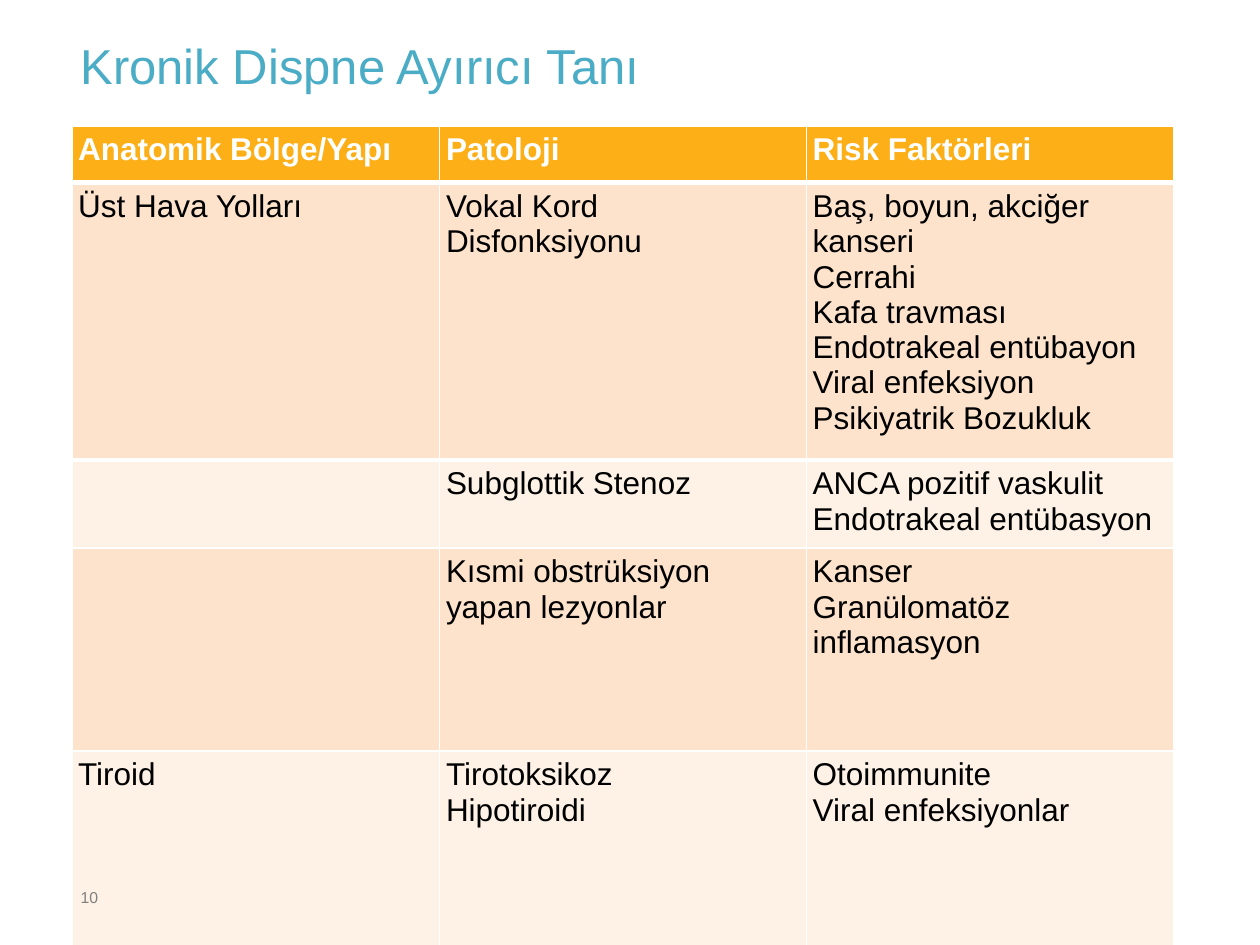
from lxml.etree import SubElement
from pptx import Presentation
from pptx.dml.color import RGBColor
from pptx.enum.text import MSO_ANCHOR, MSO_AUTO_SIZE
from pptx.oxml.ns import qn
from pptx.util import Inches, Pt

COLORS = {
    "title": "4BACC6", "header": "FCAF17", "band_dark": "FEE3CC",
    "band_light": "FEF2E7", "white": "FFFFFF", "text": "000000",
    "page_number": "7F7F7F",
}
FONT = "Arial"
INSET = Inches(0.05)
COLUMNS = (2.92, 2.91, 2.92)
ROWS = (0.45, 2.2, 0.7, 1.61, 1.61)
THIN, THICK = 1, 3
THICK_EDGES = (1, 2)  # horizontal grid lines, counted from the table top
CELLS = (
    ("Anatomik Bölge/Yapı", "Patoloji", "Risk Faktörleri"),
    ("Üst Hava Yolları", "Vokal Kord Disfonksiyonu",
     "Baş, boyun, akciğer kanseri\nCerrahi\nKafa travması\n"
     "Endotrakeal entübayon\nViral enfeksiyon\nPsikiyatrik Bozukluk"),
    ("", "Subglottik Stenoz", "ANCA pozitif vaskulit\nEndotrakeal entübasyon"),
    ("", "Kısmi obstrüksiyon yapan lezyonlar",
     "Kanser\nGranülomatöz inflamasyon"),
    ("Tiroid", "Tirotoksikoz\nHipotiroidi", "Otoimmunite\nViral enfeksiyonlar"),
)


def rgb(name):
    return RGBColor.from_string(COLORS[name])


def set_insets(target):
    target.margin_left = target.margin_right = INSET
    target.margin_top = target.margin_bottom = INSET


def add_lines(paragraph, text, size, color, bold=False):
    """Add one run per line, with line breaks between them."""
    for index, line in enumerate(text.split("\n")):
        if index:
            paragraph.add_line_break()
        run = paragraph.add_run()
        run.text = line
        run.font.name = FONT
        run.font.size = Pt(size)
        run.font.bold = bold
        run.font.color.rgb = rgb(color)


def add_label(slide, box, text, size, color, wrap=True):
    shape = slide.shapes.add_textbox(*map(Inches, box))
    frame = shape.text_frame
    frame.word_wrap = wrap
    frame.auto_size = MSO_AUTO_SIZE.NONE if wrap else MSO_AUTO_SIZE.SHAPE_TO_FIT_TEXT
    frame.vertical_anchor = MSO_ANCHOR.TOP
    set_insets(frame)
    paragraph = frame.paragraphs[0]
    add_lines(paragraph, text, size, color)
    return paragraph


def add_title(slide, box):
    paragraph = add_label(slide, box, "Kronik Dispne Ayırıcı Tanı", 28, "title")
    paragraph.line_spacing = 0.75


def set_borders(cell, widths):
    """Draw white cell borders; widths are points for left, right, top, bottom."""
    properties = cell._tc.get_or_add_tcPr()
    for index, (side, width) in enumerate(zip("LRTB", widths)):
        line = properties.makeelement(qn(f"a:ln{side}"), {"w": str(Pt(width))})
        fill = SubElement(line, qn("a:solidFill"))
        SubElement(fill, qn("a:srgbClr"), val=COLORS["white"])
        properties.insert(index, line)


def edge_width(edge):
    return THICK if edge in THICK_EDGES else THIN


def add_diagnosis_table(slide, left, top):
    box = map(Inches, (left, top, sum(COLUMNS), sum(ROWS)))
    table = slide.shapes.add_table(len(ROWS), len(COLUMNS), *box).table
    for column, width in zip(table.columns, COLUMNS):
        column.width = Inches(width)
    for row_index, (row, height) in enumerate(zip(table.rows, ROWS)):
        row.height = Inches(height)
        is_header = row_index == 0
        band = "band_dark" if row_index % 2 else "band_light"
        for cell, text in zip(row.cells, CELLS[row_index]):
            set_insets(cell)
            cell.fill.solid()
            cell.fill.fore_color.rgb = rgb("header" if is_header else band)
            set_borders(cell, (THIN, THIN, edge_width(row_index),
                               edge_width(row_index + 1)))
            if text:
                add_lines(cell.text_frame.paragraphs[0], text, 18,
                          "white" if is_header else "text", is_header)


def main():
    presentation = Presentation()
    presentation.slide_width = Inches(10)
    presentation.slide_height = Inches(7.5)
    slide = presentation.slides.add_slide(presentation.slide_layouts[6])
    add_title(slide, (0.59, 0.34, 9.1, 0.88))
    add_diagnosis_table(slide, 0.57, 1)
    add_label(slide, (0.59, 7, 0.25, 0.23), "10", 9, "page_number", wrap=False)
    presentation.save("out.pptx")


if __name__ == "__main__":
    main()
